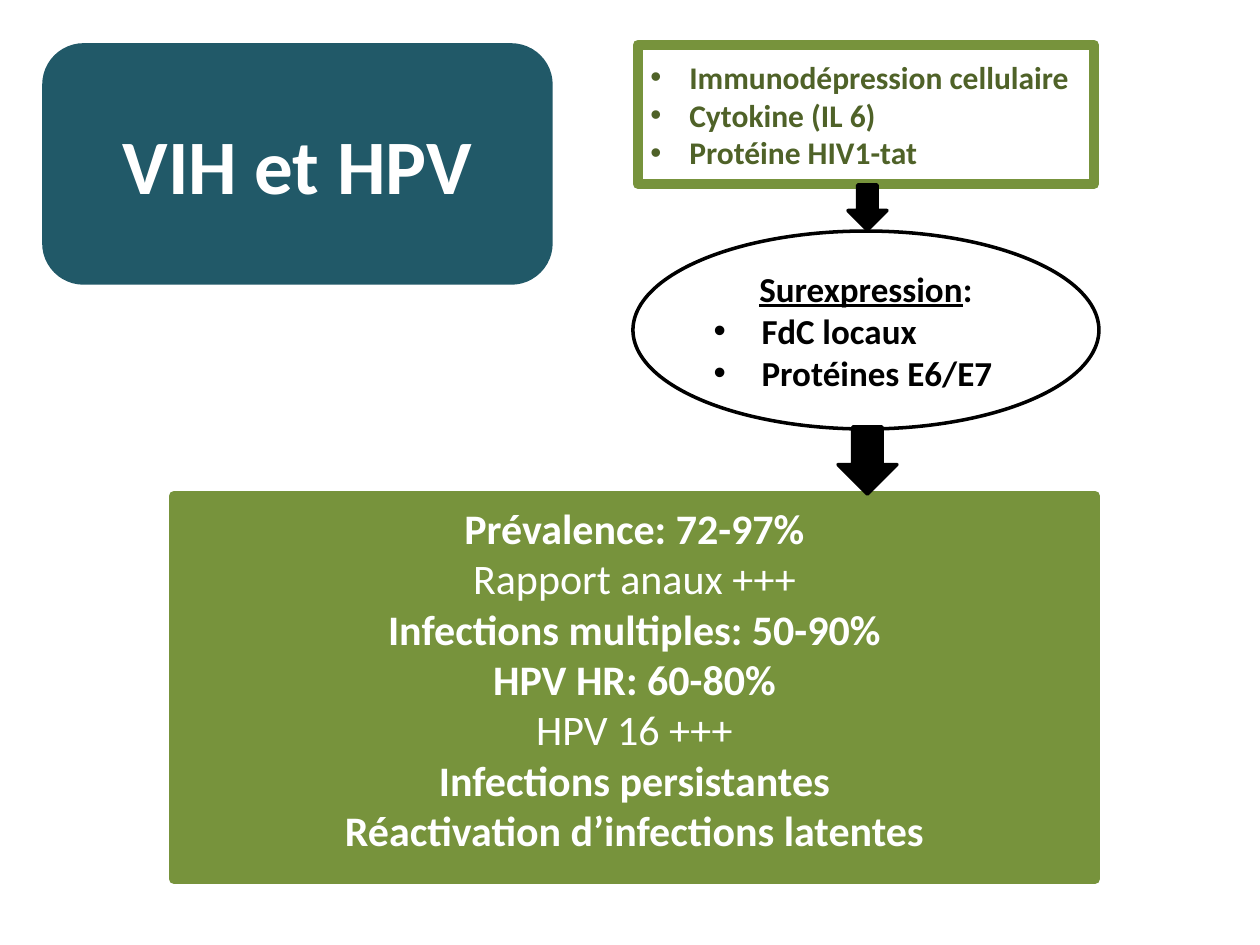
import lxml.etree
import pptx
import pptx.dml.color
import pptx.enum.shapes
import pptx.enum.text
import pptx.oxml.ns
import pptx.util

RGBColor = pptx.dml.color.RGBColor
Shape = pptx.enum.shapes.MSO_SHAPE
Anchor = pptx.enum.text.MSO_ANCHOR
Align = pptx.enum.text.PP_ALIGN

TEAL = RGBColor(0x21, 0x59, 0x68)
GREEN = RGBColor(0x77, 0x93, 0x3C)
DARK_GREEN = RGBColor(0x4F, 0x62, 0x28)
WHITE = RGBColor(0xFF, 0xFF, 0xFF)
BLACK = RGBColor(0x00, 0x00, 0x00)

PX_PER_INCH = 126
FONT = "Calibri"


def px(length):
    return pptx.util.Emu(round(length * 914400 / PX_PER_INCH))


class SlideBuilder:
    """Holds the style and the current slide, and draws each kind of element."""

    def __init__(self, presentation):
        self.slide = presentation.slides.add_slide(presentation.slide_layouts[5])

    def box(self, kind, bounds, fill, line, line_width):
        shape = self.slide.shapes.add_shape(kind, *map(px, bounds))
        shape.shadow.inherit = False
        shape.fill.solid()
        shape.fill.fore_color.rgb = fill
        shape.line.color.rgb = line
        shape.line.width = pptx.util.Pt(line_width)
        return shape

    def title(self, text, bounds, size, color):
        title = self.slide.shapes.title
        title.left, title.top, title.width, title.height = map(px, bounds)
        self.slide.shapes.element.append(title.element)
        self.frame(title, Anchor.MIDDLE)
        self.run(self.paragraph(title, Align.CENTER), text, size, color)

    def frame(self, shape, anchor):
        shape.text_frame.word_wrap = True
        shape.text_frame.vertical_anchor = anchor

    def paragraph(self, shape, alignment):
        frame = shape.text_frame
        first = frame.paragraphs[0]
        paragraph = frame.add_paragraph() if first.runs else first
        paragraph.alignment = alignment
        return paragraph

    def run(self, paragraph, text, size, color, bold=True, underline=False):
        run = paragraph.add_run()
        run.text = text
        font = run.font
        font.name = FONT
        font.size = pptx.util.Pt(size)
        font.color.rgb = color
        font.bold = bold
        font.underline = underline

    def bullets(self, shape, items, size, color, indent):
        for item in items:
            paragraph = self.paragraph(shape, Align.LEFT)
            properties = paragraph._p.get_or_add_pPr()
            properties.set("marL", str(px(indent)))
            properties.set("indent", str(-px(indent)))
            font = lxml.etree.SubElement(properties, pptx.oxml.ns.qn("a:buFont"))
            font.set("typeface", "Arial")
            bullet = lxml.etree.SubElement(properties, pptx.oxml.ns.qn("a:buChar"))
            bullet.set("char", "•")
            self.run(paragraph, item, size, color)


def main():
    presentation = pptx.Presentation()
    presentation.slide_width = px(1260)
    presentation.slide_height = px(945)
    builder = SlideBuilder(presentation)

    title_bounds = (44, 45, 507, 238)
    builder.box(Shape.ROUNDED_RECTANGLE, title_bounds, TEAL, TEAL, 2)
    builder.title("VIH et HPV", title_bounds, 44, WHITE)

    findings = builder.box(Shape.RECTANGLE, (174, 496, 921, 383), GREEN, GREEN, 6)
    builder.frame(findings, Anchor.TOP)
    for text, bold in (
        ("Prévalence: 72-97%", True),
        ("Rapport anaux +++", False),
        ("Infections multiples: 50-90%", True),
        ("HPV HR: 60-80%", True),
        ("HPV 16 +++", False),
        ("Infections persistantes", True),
        ("Réactivation d’infections latentes", True),
    ):
        builder.run(builder.paragraph(findings, Align.CENTER), text, 24, WHITE, bold)

    causes = builder.box(Shape.RECTANGLE, (638, 45, 456, 139), WHITE, GREEN, 6)
    builder.frame(causes, Anchor.MIDDLE)
    causes_items = ("Immunodépression cellulaire", "Cytokine (IL 6)", "Protéine HIV1-tat")
    builder.bullets(causes, causes_items, 18, DARK_GREEN, 39)

    overexpression = builder.box(Shape.OVAL, (633, 231, 466, 198), WHITE, BLACK, 2)
    builder.frame(overexpression, Anchor.MIDDLE)
    heading = builder.paragraph(overexpression, Align.CENTER)
    builder.run(heading, "Surexpression", 20, BLACK, underline=True)
    builder.run(heading, ":", 20, BLACK)
    builder.bullets(overexpression, ("FdC locaux", "Protéines E6/E7"), 20, BLACK, 48)

    for bounds in ((848, 185, 39, 45), (838, 427, 59, 67)):
        builder.box(Shape.DOWN_ARROW, bounds, BLACK, BLACK, 2)

    presentation.save("out.pptx")


if __name__ == "__main__":
    main()
